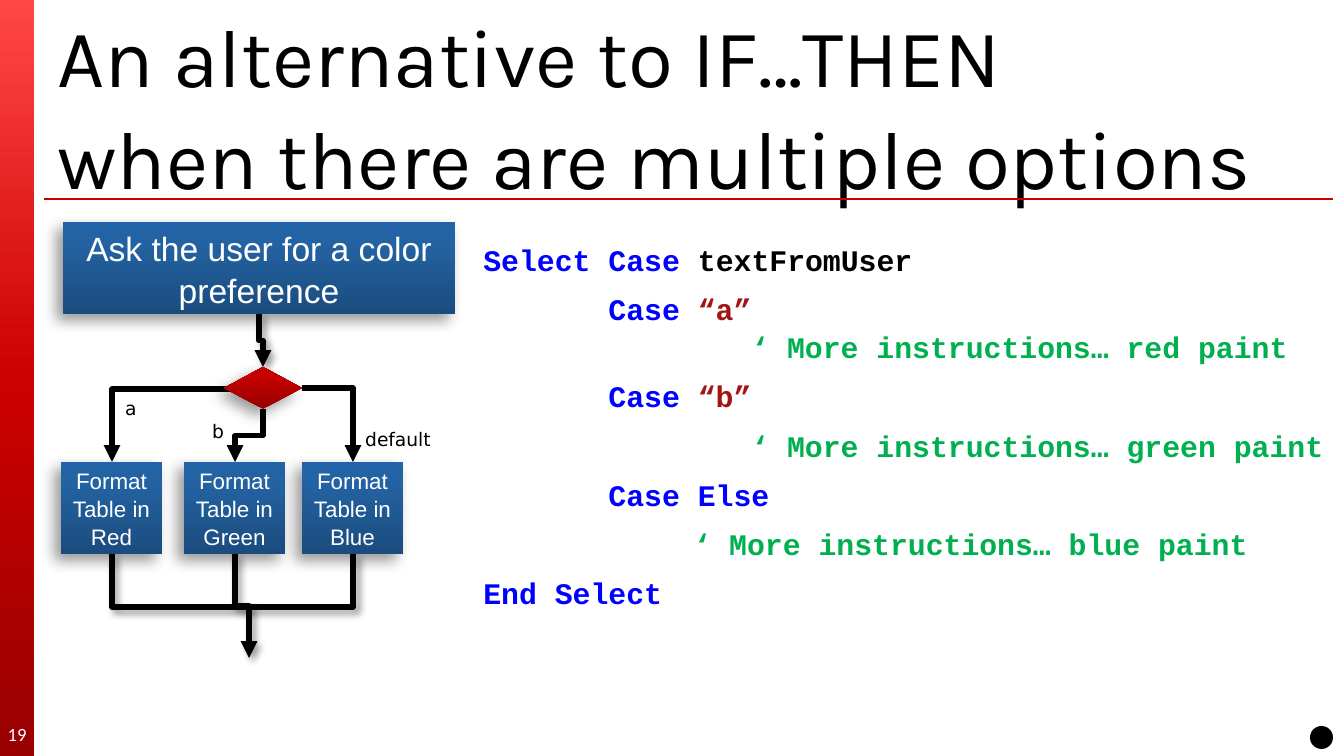
from lxml import etree
from pptx import Presentation
from pptx.dml.color import RGBColor
from pptx.enum.shapes import MSO_CONNECTOR, MSO_SHAPE
from pptx.enum.text import MSO_ANCHOR, MSO_AUTO_SIZE, PP_ALIGN
from pptx.oxml import parse_xml
from pptx.oxml.ns import nsdecls, qn
from pptx.util import Pt

PX = 6804  # EMU per px
ELBOW = MSO_CONNECTOR.ELBOW
PROCESS, DECISION = MSO_SHAPE.FLOWCHART_PROCESS, MSO_SHAPE.FLOWCHART_DECISION
LEFT, CENTER = PP_ALIGN.LEFT, PP_ALIGN.CENTER
MIDDLE = MSO_ANCHOR.MIDDLE
color = RGBColor.from_string

BLACK, WHITE = "000000", "FFFFFF"
KEYWORD, STRING, COMMENT = "0000FF", "A31515", "00B050"
BAR_STOPS = [(0, "FF4747"), (50, "CC0000"), (100, "990000")]
BLUE_STOPS = [(0, "1B4C7E"), (80, "2363A3"), (100, "2063A6")]
RED_STOPS = [(0, "980000"), (80, "C60000"), (100, "C70000")]


def add_effects(properties, blur=0, distance=0, angle=0):
    """Append an effect list, with a soft black shadow if blur is given in points."""
    effects = etree.SubElement(properties, qn("a:effectLst"))
    if blur:
        effects.append(parse_xml(
            f'<a:outerShdw {nsdecls("a")} blurRad="{Pt(blur)}" dist="{Pt(distance)}" '
            f'dir="{angle * 60000}" rotWithShape="0"><a:srgbClr val="{BLACK}">'
            '<a:alpha val="40000"/></a:srgbClr></a:outerShdw>'))


def add_gradient_shape(kind, bounds, stops, angle, *shadow):
    shape = slide.shapes.add_shape(kind, *(n * PX for n in bounds))
    shape.line.fill.background()
    shape.fill.gradient()
    properties = shape._element.spPr
    stop_xml = "".join(f'<a:gs pos="{position * 1000}"><a:srgbClr val="{value}"/></a:gs>'
                       for position, value in stops)
    properties.replace(properties.find(qn("a:gradFill")), parse_xml(
        f'<a:gradFill {nsdecls("a")} rotWithShape="1"><a:gsLst>{stop_xml}</a:gsLst>'
        f'<a:lin ang="{angle * 60000}" scaled="0"/></a:gradFill>'))
    add_effects(properties, *shadow)
    return shape


deck = Presentation()
deck.slide_width, deck.slide_height = 1344 * PX, 756 * PX
slide = deck.slides.add_slide(deck.slide_layouts[1])
title, body = slide.shapes.title, slide.placeholders[1]

# Side bar and rule under the title
add_gradient_shape(MSO_SHAPE.RECTANGLE, (0, 0, 34, 756), BAR_STOPS, 90)
rule = slide.shapes.add_connector(MSO_CONNECTOR.STRAIGHT, 44 * PX, 199 * PX, 1333 * PX, 199 * PX)
rule.line.color.rgb = color("C80000")
rule.line.width = Pt(0.75)
add_effects(rule._element.spPr)

# Title
title.left, title.top, title.width, title.height = (n * PX for n in (44, 8, 1288, 179))
title.fill.solid()
title.fill.fore_color.rgb = color(WHITE)
frame = title.text_frame
frame.text = "An alternative to IF…THEN\vwhen there are multiple options"
frame.auto_size = MSO_AUTO_SIZE.NONE
frame.vertical_anchor = MIDDLE
frame.margin_top, frame.margin_bottom = 13 * PX, 0
para = frame.paragraphs[0]
para.alignment = LEFT
para.line_spacing = 1.03
for span in para.runs:
    span.font.name = "Karla"
    span.font.size = Pt(44)
    span.font.color.rgb = color(BLACK)

# Code listing: one list of (text, colour) per paragraph, None is a line break
code = [
    [("Select Case", KEYWORD), (" textFromUser", BLACK)],
    [("       Case ", KEYWORD), ("“a”", STRING), None,
     ("               ‘ More instructions… red paint", COMMENT)],
    [("       Case ", KEYWORD), ("“b”", STRING)],
    [("               ‘ More instructions… green paint", COMMENT)],
    [("       Case Else", KEYWORD)],
    [("\t        ‘ More instructions… blue paint", COMMENT)],
    [("End Select", KEYWORD)],
]
body.left, body.top, body.width, body.height = (n * PX for n in (470, 233, 874, 456))
frame = body.text_frame
frame.auto_size = MSO_AUTO_SIZE.NONE
for index, parts in enumerate(code):
    para = frame.add_paragraph() if index else frame.paragraphs[0]
    properties = para._p.get_or_add_pPr()
    properties.set("marL", "0")
    properties.set("indent", "0")
    etree.SubElement(properties, qn("a:buNone"))
    para.line_spacing = 1.06
    para.space_before = Pt(6 if index else 0)
    for part in parts:
        if part is None:
            para.add_line_break()
            etree.SubElement(para._p[-1], qn("a:rPr"), sz="1600")
            continue
        span = para.add_run()
        span.text = part[0]
        span.font.name = "Courier New"
        span.font.size = Pt(16)
        span.font.bold = True
        span.font.color.rgb = color(part[1])

# Flowchart boxes: text, bounds, size
boxes = [("Ask the user for a color preference", (63, 222, 392, 92), 18)]
for name, left in (("Red", 61), ("Green", 184), ("Blue", 302)):
    boxes.append((f"Format Table in {name}", (left, 462, 101, 92), 12))
for text, bounds, size in boxes:
    box = add_gradient_shape(PROCESS, bounds, BLUE_STOPS, 270, 8, 5, 135)
    frame = box.text_frame
    frame.text = text
    frame.word_wrap = True
    frame.vertical_anchor = MIDDLE
    frame.margin_left = frame.margin_right = frame.margin_top = frame.margin_bottom = 7 * PX
    para = frame.paragraphs[0]
    para.alignment = CENTER
    para.line_spacing = 1.04
    font = para.runs[0].font
    font.name = "Arial"
    font.size = Pt(size)
    font.color.rgb = color(WHITE)

# Elbow connectors: start, end, preset, rotation, flip, arrow, shadow
elbows = [
    ((259, 314), (263, 367), "bentConnector3", 270, "flipH", True, True),
    ((235, 554), (249, 658), "bentConnector3", 270, "flipH", True, True),
    ((112, 554), (246, 607), "bentConnector2", 270, "flipH", False, True),
    ((353, 554), (246, 607), "bentConnector2", 90, None, False, True),
    ((240, 389), (112, 462), "bentConnector2", 180, "flipV", True, False),
    ((263, 409), (235, 462), "bentConnector3", 90, None, True, False),
    ((302, 388), (353, 462), "bentConnector2", 0, None, True, False),
]
for (x1, y1), (x2, y2), preset, rotation, flip, arrow, shadow in elbows:
    width, height = abs(x2 - x1), abs(y2 - y1)
    if rotation in (90, 270):
        width, height = height, width
    left, top = (x1 + x2 - width) / 2, (y1 + y2 - height) / 2
    elbow = slide.shapes.add_connector(
        ELBOW, *(int(n * PX) for n in (left, top, left + width, top + height)))
    properties = elbow._element.spPr
    properties.find(qn("a:prstGeom")).set("prst", preset)
    frame_xml = properties.find(qn("a:xfrm"))
    frame_xml.set("rot", str(rotation * 60000))
    if flip:
        frame_xml.set(flip, "1")
    elbow.line.color.rgb = color(BLACK)
    elbow.line.width = Pt(3)
    if arrow:
        etree.SubElement(properties.find(qn("a:ln")), qn("a:tailEnd"), type="triangle")
    add_effects(properties, *((4, 3, 45) if shadow else ()))

add_gradient_shape(DECISION, (224, 367, 78, 42), RED_STOPS, 270, 8, 5, 135)

# Branch labels and page number: text, bounds, font, colour
labels = [
    ("a", (112, 390, 44, 36), "DejaVu Sans", BLACK),
    ("b", (199, 413, 44, 36), "DejaVu Sans", BLACK),
    ("default", (352, 421, 101, 36), "DejaVu Sans", BLACK),
    ("19", (0, 714, 34, 40), "Calibri", WHITE),
]
for text, bounds, font_name, ink in labels:
    label = slide.shapes.add_textbox(*(n * PX for n in bounds))
    frame = label.text_frame
    frame.text = text
    frame.word_wrap = True
    font = frame.paragraphs[0].runs[0].font
    font.name = font_name
    font.size = Pt(10)
    font.color.rgb = color(ink)
# The page number, last in the list, is centred in the side bar
frame.margin_left = frame.margin_right = frame.margin_top = frame.margin_bottom = 0
frame.vertical_anchor = MIDDLE
frame.paragraphs[0].alignment = CENTER

dot = slide.shapes.add_shape(MSO_SHAPE.OVAL, *(n * PX for n in (1310, 726, 23, 23)))
dot.shadow.inherit = False
dot.fill.solid()
dot.fill.fore_color.rgb = color(BLACK)
dot.line.fill.background()

deck.save("out.pptx")
